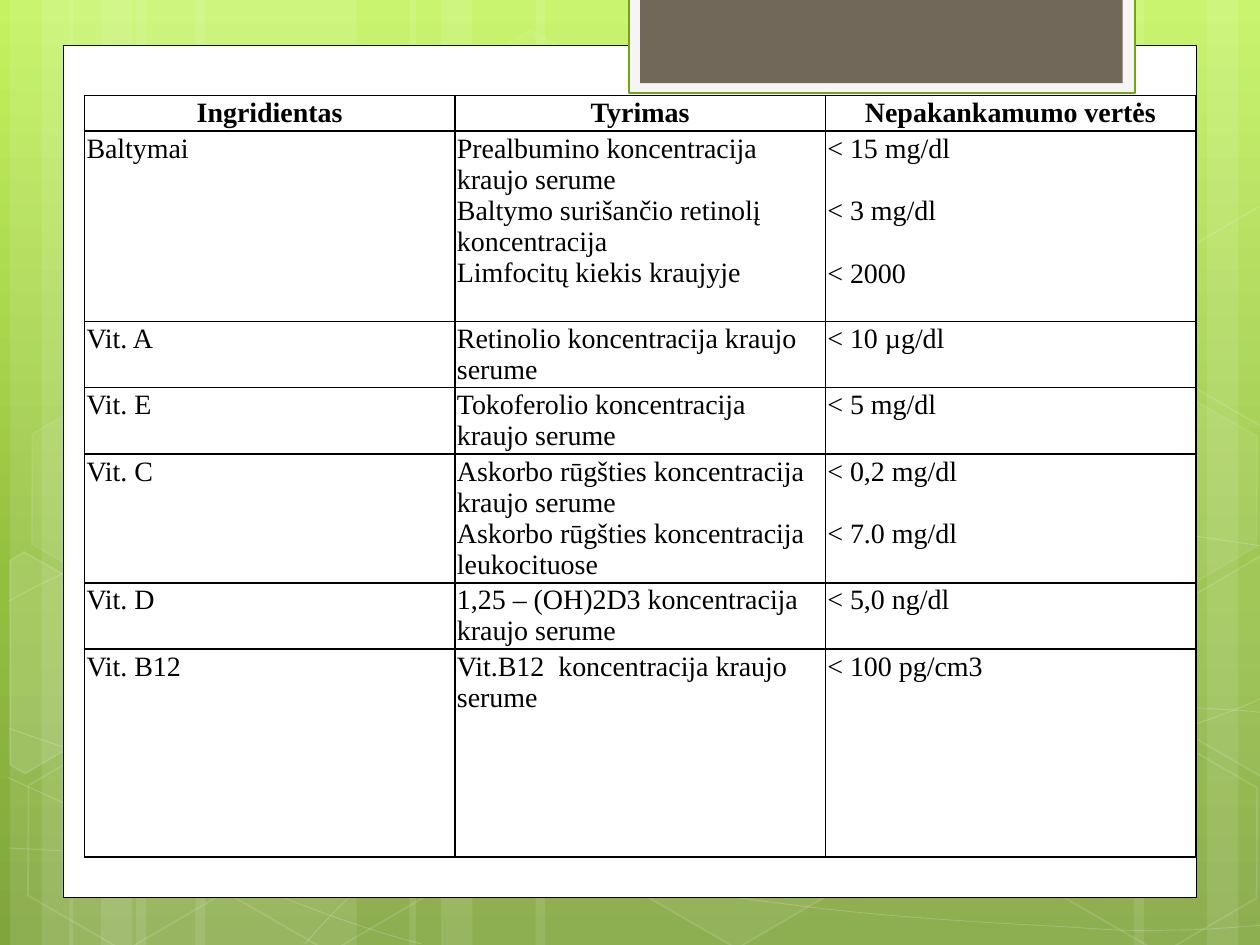
from copy import deepcopy

from lxml.etree import SubElement
from pptx import Presentation
from pptx.dml.color import RGBColor
from pptx.enum.shapes import MSO_SHAPE as Shape
from pptx.enum.text import PP_ALIGN as Align
from pptx.oxml.ns import qn
from pptx.util import Inches, Pt

HEADERS = ["Ingridientas", "Tyrimas", "Nepakankamumo vertės"]
ROWS = [
    ("Baltymai",
     ["Prealbumino koncentracija kraujo serume",
      "Baltymo surišančio retinolį koncentracija",
      "Limfocitų kiekis kraujyje"],
     ["< 15 mg/dl", "< 3 mg/dl", "< 2000"]),
    ("Vit. A", ["Retinolio koncentracija kraujo serume"], ["< 10 µg/dl"]),
    ("Vit. E", ["Tokoferolio koncentracija kraujo serume"], ["< 5 mg/dl"]),
    ("Vit. C",
     ["Askorbo rūgšties koncentracija kraujo serume",
      "Askorbo rūgšties koncentracija leukocituose"],
     ["< 0,2 mg/dl", "< 7.0 mg/dl"]),
    ("Vit. D", ["1,25 – (OH)2D3 koncentracija kraujo serume"], ["< 5,0 ng/dl"]),
    ("Vit. B12", ["Vit.B12  koncentracija kraujo serume"], ["< 100 pg/cm3"]),
]
ROW_HEIGHTS = [0.25, 1.51, 0.46, 0.46, 0.89, 0.46, 1.65]
COLUMN_WIDTH = 2.94

GRADIENT = [("C3F35F", 0), ("93BF3F", 0.62), ("81A53E", 1)]
STRIPES = [(1.08, 1.75), (0.08, 0.5), (0.33, 0.83), (1.55, 1.75), (0.55, 0.5),
           (0.8, 0.83), (7.33, 1.75), (9.58, 0.5), (9, 0.83), (4.25, 3.08),
           (3.25, 0.5), (3.5, 0.83)]
CURVES = [
    [(0.07, 6.73), (0.61, 6.76), (1.15, 6.79), (1.9, 6.78), (2.65, 6.77),
     (3.58, 6.75), (4.58, 6.65), (5.58, 6.55), (7, 6.36), (7.92, 6.17),
     (8.83, 5.98), (9.77, 5.68), (10.07, 5.51)],
    [(0.07, 4.77), (0.36, 4.61), (0.65, 4.46), (1.21, 4.31), (1.78, 4.16),
     (2.59, 3.94), (3.47, 3.87), (4.36, 3.8), (5.44, 3.79), (6.54, 3.87),
     (7.64, 3.95), (9.47, 4.26), (10.07, 4.34)],
    [(0.06, 6.17), (1.27, 6.72), (2.47, 7.27), (3.34, 7.49)],
    [(0.07, 5.78), (0.38, 5.89), (0.7, 6), (1.28, 6.16), (1.86, 6.31),
     (2.73, 6.56), (3.57, 6.73), (4.4, 6.9), (5.45, 7.08), (6.28, 7.18),
     (7.11, 7.29), (8, 7.33), (8.53, 7.36), (9.05, 7.4), (9.19, 7.38),
     (9.45, 7.38), (9.71, 7.37), (9.89, 7.35), (10.07, 7.34)],
    [(2.42, 7.49), (2.6, 7.29), (2.78, 7.09), (3.02, 6.91), (3.26, 6.73),
     (3.6, 6.53), (3.88, 6.39), (4.16, 6.25), (4.33, 6.19), (4.7, 6.09),
     (5.06, 5.99), (5.73, 5.85), (6.08, 5.78), (6.44, 5.71), (6.49, 5.71),
     (6.8, 5.69), (7.11, 5.66), (7.6, 5.63), (7.94, 5.62), (8.29, 5.61),
     (8.86, 5.62), (8.86, 5.62), (9.08, 5.62), (9.31, 5.62), (9.53, 5.62),
     (9.71, 5.63), (9.88, 5.64), (9.97, 5.65), (10.06, 5.66), (10.03, 5.65),
     (10.06, 5.66)],
]
CURVES[-1].remove((8.86, 5.62))
CURVES[-1].insert(20, (8.86, 5.62))
HEXAGONS = [(3.34, 0.36, 4, 8), (4.97, 5.89, 6, 12), (0.11, 5.91, 0, 12),
            (0.14, 3.12, 7, 8), (1.74, 5.92, 0, 12), (7.53, 4.53, 10, 12),
            (8.34, 5.93, 0, 12), (8.34, 3.14, 7, 8)]
CUT_HEXAGONS = [
    ([(0.08, 4.45), (0.19, 4.38), (0.96, 4.82), (0.95, 5.7), (0.2, 6.14),
      (0.08, 6.07)], 10),
    ([(9.26, 4.85), (10.01, 4.41), (10.09, 4.46), (10.09, 6.13),
      (10.02, 6.17), (9.26, 5.73)], 4),
    ([(9.26, 2.07), (10.01, 1.63), (10.1, 1.68), (10.09, 3.35),
      (10.02, 3.39), (9.26, 2.95)], 0),
]
PANELS = [((0.5, 0.36, 9, 6.76), "FFFFFF", ("000000", 0.5)),
          ((4.99, -0.02, 4.02, 0.76), "F5F5F5", ("74A510", 1.25)),
          ((5.08, -0.02, 3.83, 0.68), "71685A", None)]


def paint(fill, color, opacity=100):
    """Fill with a hex colour at a percentage of opacity."""
    if not opacity:
        fill.background()
        return
    fill.solid()
    fill.fore_color.rgb = RGBColor.from_string(color)
    if opacity < 100:
        tint = fill._xPr.find(qn("a:solidFill"))[0]
        SubElement(tint, qn("a:alpha"), val=str(opacity * 1000))


def style(shape, color, opacity=100, line=None, line_opacity=100):
    """Set the fill and the (colour, points) line of a shape."""
    shape.shadow.inherit = False
    paint(shape.fill, color, opacity)
    if line:
        paint(shape.line.fill, line[0], line_opacity)
        shape.line.width = Pt(line[1])
    else:
        shape.line.fill.background()


def add_preset(page, kind, left, top, width, height):
    """Add a preset shape placed in inches."""
    return page.shapes.add_shape(kind, *map(Inches, (left, top, width, height)))


def add_outline(page, points, closed):
    """Add a freeform through points in inches."""
    corners = [(Inches(x), Inches(y)) for x, y in points]
    builder = page.shapes.build_freeform(*corners[0])
    builder.add_line_segments(corners[1:], close=closed)
    return builder.convert_to_shape()


def add_curve(page, points):
    """Add an open chain of cubic Bézier segments."""
    curve = add_outline(page, points, False)
    outline = next(curve._element.iter(qn("a:path")))
    lines = outline.findall(qn("a:lnTo"))
    for start in range(0, len(lines), 3):
        segment = SubElement(outline, qn("a:cubicBezTo"))
        for line in lines[start:start + 3]:
            segment.append(line[0])
            outline.remove(line)
    return curve


def add_background(page):
    """Paint the gradient, stripes, curves and hexagons."""
    fill = page.background.fill
    fill.gradient()
    fill.gradient_angle = 270
    first_stop = next(page.element.iter(qn("a:gs")))
    first_stop.addnext(deepcopy(first_stop))
    for stop, (color, position) in zip(fill.gradient_stops, GRADIENT):
        stop.color.rgb = RGBColor.from_string(color)
        stop.position = position
    for left, width in STRIPES:
        style(add_preset(page, Shape.RECTANGLE, left, 0, width, 7.5), "FFFFFF", 10)
    for points in CURVES:
        style(add_curve(page, points), "FFFFFF", 0, ("FFFFFF", 0.5), 20)
    for left, top, opacity, line_opacity in HEXAGONS:
        hexagon = add_preset(page, Shape.HEXAGON, left, top, 1.75, 1.52)
        hexagon.rotation = 30
        hexagon.adjustments[0] = 0.285
        hexagon.adjustments[1] = 1.155
        style(hexagon, "FFFFFF", opacity, ("FFFFFF", 1), line_opacity)
    for points, opacity in CUT_HEXAGONS:
        style(add_outline(page, points, True), "FFFFFF", opacity, ("FFFFFF", 1), 12)


def fill_cell(cell, lines, header=False, gap=0):
    """Write and format one table cell with black borders."""
    cell.margin_left = cell.margin_right = Pt(1.2)
    cell.margin_top = cell.margin_bottom = Pt(1.2)
    properties = cell._tc.get_or_add_tcPr()
    for side in ("lnL", "lnR", "lnT", "lnB"):
        border = SubElement(properties, qn(f"a:{side}"), w=str(Pt(1)))
        SubElement(SubElement(border, qn("a:solidFill")), qn("a:srgbClr"), val="000000")
    cell.fill.background()
    cell.text = "\n".join(lines)
    for para in cell.text_frame.paragraphs:
        para.alignment = Align.CENTER if header else Align.LEFT
        para.space_after = Pt(gap)
        para.font.name = "Times New Roman"
        para.font.size = Pt(16)
        para.font.bold = header
        para.font.color.rgb = RGBColor.from_string("000000")


def add_deficiency_table(page):
    """Add the table of ingredients, tests and deficiency values."""
    frame = page.shapes.add_table(
        len(ROW_HEIGHTS), len(HEADERS), Inches(0.67), Inches(0.76),
        Inches(COLUMN_WIDTH * len(HEADERS)), Inches(sum(ROW_HEIGHTS)))
    table = frame.table
    table.first_row = table.horz_banding = False
    for column in table.columns:
        column.width = Inches(COLUMN_WIDTH)
    for row, height in zip(table.rows, ROW_HEIGHTS):
        row.height = Inches(height)
    for cell, text in zip(table.rows[0].cells, HEADERS):
        fill_cell(cell, [text], header=True)
    for number, (ingredient, tests, values) in enumerate(ROWS, 1):
        name_cell, test_cell, value_cell = table.rows[number].cells
        fill_cell(name_cell, [ingredient])
        fill_cell(test_cell, tests)
        fill_cell(value_cell, values, gap=18 if len(values) > 1 else 0)


deck = Presentation()
deck.slide_width, deck.slide_height = Inches(10), Inches(7.5)
page = deck.slides.add_slide(deck.slide_layouts[6])
add_background(page)
for place, color, line in PANELS:
    style(add_preset(page, Shape.RECTANGLE, *place), color, line=line)
add_deficiency_table(page)
deck.save("out.pptx")
